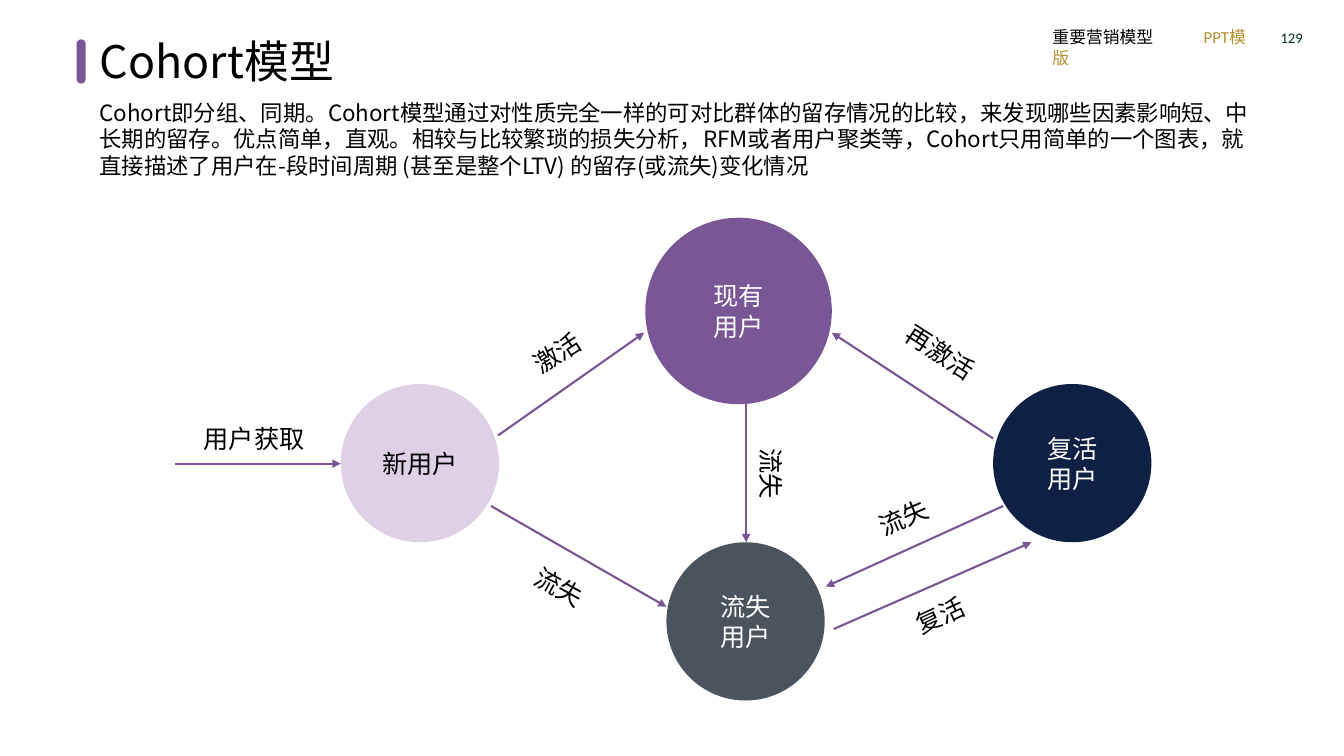
from dataclasses import dataclass

from pptx import Presentation
from pptx.dml.color import RGBColor
from pptx.enum.shapes import MSO_CONNECTOR as CONN, MSO_SHAPE as SHAPE
from pptx.enum.text import MSO_ANCHOR as ANCHOR, PP_ALIGN as ALIGN
from pptx.oxml.ns import qn
from pptx.util import Pt
from lxml.etree import SubElement

PX = 9144  # 100 px to the inch


@dataclass(frozen=True)
class Theme:
    purple: str = "795696"
    lilac: str = "DED1E5"
    navy: str = "0E2044"
    slate: str = "4B535D"
    gold: str = "B49132"
    green: str = "002E1A"
    black: str = "000000"
    white: str = "FFFFFF"
    cjk: str = "Noto Sans CJK SC"
    circle_font: str = "Lato"
    header_font: str = "Calibri"
    title: float = 32
    label: float = 18
    body: float = 16
    header: float = 12
    number: float = 10.5


T = Theme()


def write(sp, text, size, color=T.black, font=T.cjk, align=ALIGN.LEFT, anchor=ANCHOR.TOP):
    """Fill a shape with text, one paragraph a line, and format every run."""
    tf = sp.text_frame
    tf.word_wrap = True
    tf.vertical_anchor = anchor
    tf.text = text
    for p in tf.paragraphs:
        p.alignment = align
        for r in p.runs:
            r.font.size = Pt(size)
            r.font.name = font
            r.font.color.rgb = RGBColor.from_string(color)
            SubElement(r.font._element, qn("a:ea"), typeface=T.cjk)
    return tf


def add_filled(kind, box, color):
    sp = s.shapes.add_shape(kind, *[v * PX for v in box])
    sp.shadow.inherit = False
    sp.fill.solid()
    sp.fill.fore_color.rgb = RGBColor.from_string(color)
    sp.line.fill.background()
    return sp


prs = Presentation()
prs.slide_width, prs.slide_height = 1333 * PX, 750 * PX
s = prs.slides.add_slide(prs.slide_layouts[6])

# Header, title and introduction
number = s.shapes.add_textbox(1002 * PX, 17 * PX, 300 * PX, 40 * PX)
write(number, "129", T.number, T.green, T.header_font, ALIGN.RIGHT, ANCHOR.MIDDLE)

header = s.shapes.add_textbox(1034 * PX, 22 * PX, 215 * PX, 30 * PX)
p = header.text_frame.paragraphs[0]
tabs = SubElement(p._p.get_or_add_pPr(), qn("a:tabLst"))
SubElement(tabs, qn("a:tab"), pos=str(111 * PX), algn="l")
tf = write(header, "重要营销模型\t", T.header, font=T.header_font)
r = tf.paragraphs[0].add_run()
r.text = "PPT模版"
r.font.size = Pt(T.header)
r.font.name = T.header_font
r.font.color.rgb = RGBColor.from_string(T.gold)
SubElement(r.font._element, qn("a:ea"), typeface=T.cjk)

bar = add_filled(SHAPE.ROUNDED_RECTANGLE, (76, 39, 9, 44), T.purple)
bar.adjustments[0] = 0.5

title = s.shapes.add_textbox(89 * PX, 29 * PX, 827 * PX, 64 * PX)
write(title, "Cohort模型", T.title)

intro = s.shapes.add_textbox(89 * PX, 93 * PX, 1167 * PX, 91 * PX)
write(intro, "Cohort即分组、同期。Cohort模型通过对性质完全一样的可对比群体的留存情况的比较，"
      "来发现哪些因素影响短、中长期的留存。优点简单，直观。相较与比较繁琐的损失分析，"
      "RFM或者用户聚类等，Cohort只用简单的一个图表，就直接描述了用户在-段时间周期 "
      "(甚至是整个LTV) 的留存(或流失)变化情况", T.body)

# User groups: text, left, top, diameter, fill, text colour
groups = [
    ("现有\n用户", 640, 216, 185, T.purple, T.white),
    ("复活\n用户", 985, 381, 157, T.navy, T.white),
    ("新用户", 338, 381, 157, T.lilac, T.black),
    ("流失\n用户", 661, 538, 157, T.slate, T.white),
]
for text, x, y, d, fill, color in groups:
    circle = add_filled(SHAPE.OVAL, (x, y, d, d), fill)
    write(circle, text, T.label, color, T.circle_font, ALIGN.CENTER, ANCHOR.MIDDLE)

# Flows: label, label left, label top, rotation, arrow start, arrow end
flows = [
    ("激活", 463, 330, 327.1, (494, 432), (639, 330)),
    ("用户获取", 162, 415, 0, (174, 460), (338, 460)),
    ("流失", 465, 562, 29, (487, 502), (661, 602)),
    ("再激活", 843, 329, 32.7, (985, 435), (825, 330)),
    ("流失", 806, 493, 336.4, (995, 502), (819, 582)),
    ("复活", 843, 590, 335.2, (827, 624), (1023, 538)),
    ("流失", 675, 450, 90, (740, 401), (740, 538)),
]
for text, x, y, rotation, start, end in flows:
    label = s.shapes.add_textbox(x * PX, y * PX, 180 * PX, 40 * PX)
    label.rotation = rotation
    write(label, text, T.label, align=ALIGN.CENTER)

    arrow = s.shapes.add_connector(CONN.STRAIGHT, *[v * PX for v in start + end])
    arrow.line.color.rgb = RGBColor.from_string(T.purple)
    arrow.line.width = Pt(1.5)
    SubElement(arrow.line._get_or_add_ln(), qn("a:tailEnd"), type="triangle")
    SubElement(arrow._element.spPr, qn("a:effectLst"))

prs.save("out.pptx")
